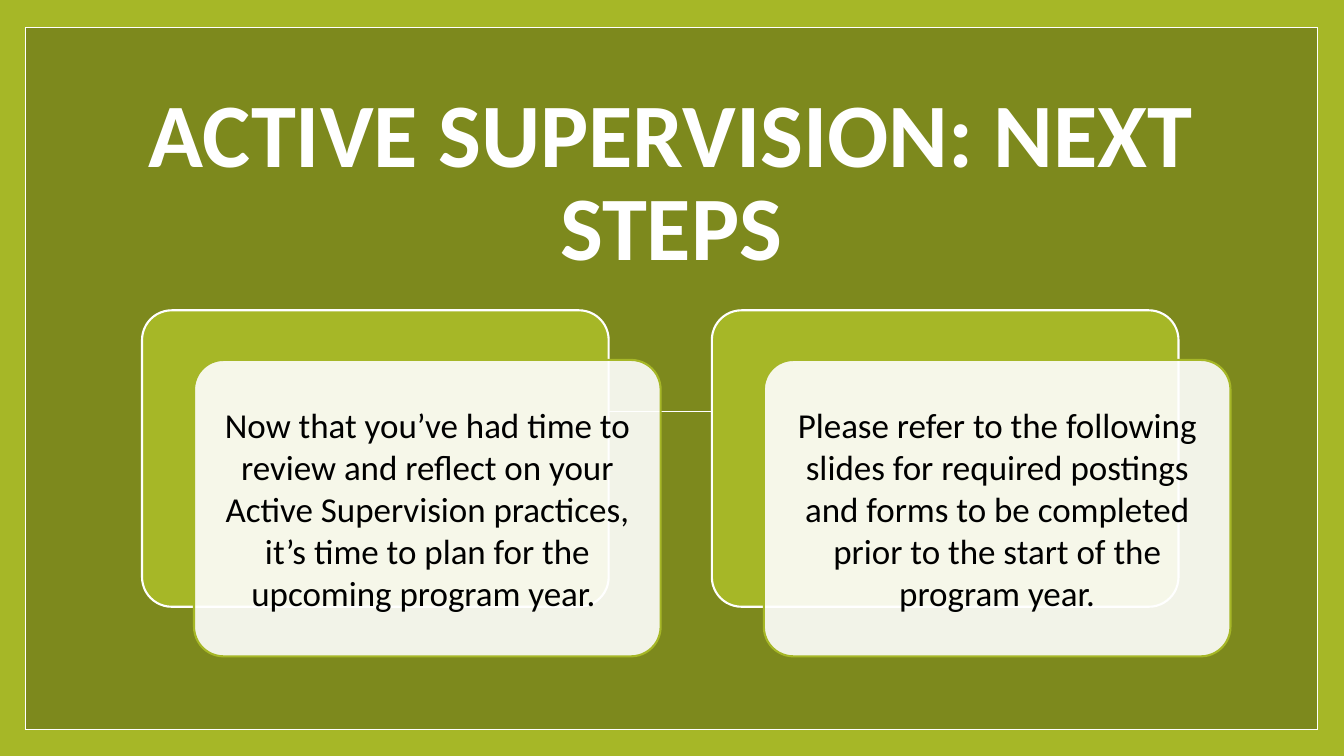
from lxml.etree import SubElement
from pptx import Presentation
from pptx.dml.color import RGBColor
from pptx.enum.shapes import MSO_CONNECTOR as Connector, MSO_SHAPE as Shape
from pptx.enum.text import MSO_ANCHOR as Anchor, MSO_AUTO_SIZE as AutoSize, PP_ALIGN as Align
from pptx.oxml.ns import qn
from pptx.util import Cm, Pt

LIME = RGBColor(0xA6, 0xB7, 0x27)
OLIVE = RGBColor(0x7D, 0x89, 0x1D)
WHITE = RGBColor(0xFF, 0xFF, 0xFF)
BLACK = RGBColor(0x00, 0x00, 0x00)

FRAME = (0.64, 0.69, 32.56, 17.7)
CARD_LEFT, CARD_TOP, CARD_STEP = 3.58, 7.82, 14.36
CARD_SIZE = (11.76, 7.47)
FRONT_SHIFT = (1.31, 1.25)
TEXT_MARGIN = 0.22

STEPS = (
    "Now that you’ve had time to review and reflect on your Active Supervision "
    "practices, it’s time to plan for the upcoming program year. ",
    "Please refer to the following slides for required postings and forms to be "
    "completed prior to the start of the program year.",
)


class SlideBuilder:
    def __init__(self, page, font_name):
        self.page = page
        self.font_name = font_name

    def background(self, color):
        fill = self.page.background.fill
        fill.solid()
        fill.fore_color.rgb = color

    def panel(self, kind, place, fill, line, width, opacity=100):
        box = self.page.shapes.add_shape(kind, *map(Cm, place))
        box.shadow.inherit = False
        if fill is None:
            box.fill.background()
        else:
            box.fill.solid()
            box.fill.fore_color.rgb = fill
            if opacity < 100:
                color = box.element.spPr.find(qn("a:solidFill"))[0]
                SubElement(color, qn("a:alpha")).set("val", str(opacity * 1000))
        box.line.color.rgb = line
        box.line.width = Pt(width)
        return box

    def line(self, start, end, color, width):
        link = self.page.shapes.add_connector(
            Connector.STRAIGHT, *map(Cm, (*start, *end)))
        link.line.color.rgb = color
        link.line.width = Pt(width)
        SubElement(link.element.spPr, qn("a:effectLst"))

    def add_text(self, box, text, size, color, anchor, bold=False, spacing=1.0):
        frame = box.text_frame
        frame.word_wrap = True
        frame.auto_size = AutoSize.NONE
        frame.vertical_anchor = anchor
        para = frame.paragraphs[0]
        para.alignment = Align.CENTER
        para.line_spacing = spacing
        span = para.add_run()
        span.text = text
        span.font.name = self.font_name
        span.font.size = Pt(size)
        span.font.bold = bold
        span.font.color.rgb = color

    def title(self, text, place):
        box = self.page.shapes.title
        box.left, box.top, box.width, box.height = map(Cm, place)
        # Bring the title in front of the frame
        box.element.getparent().append(box.element)
        self.add_text(box, text, 64.8, WHITE, Anchor.BOTTOM, True, 0.85)

    def card(self, left, top, text):
        width, height = CARD_SIZE
        front_left, front_top = left + FRONT_SHIFT[0], top + FRONT_SHIFT[1]
        back = self.panel(Shape.ROUNDED_RECTANGLE, (left, top, width, height),
                          LIME, WHITE, 1.5)
        front = self.panel(Shape.ROUNDED_RECTANGLE,
                           (front_left, front_top, width, height),
                           WHITE, LIME, 1.5, opacity=90)
        for panel in (back, front):
            panel.adjustments[0] = 0.1
        box = self.page.shapes.add_textbox(
            Cm(front_left + TEXT_MARGIN), Cm(front_top + TEXT_MARGIN),
            Cm(width - 2 * TEXT_MARGIN), Cm(height - 2 * TEXT_MARGIN))
        frame = box.text_frame
        frame.margin_left = frame.margin_right = Cm(0.25)
        frame.margin_top = frame.margin_bottom = Cm(0.25)
        self.add_text(box, text, 25, BLACK, Anchor.MIDDLE)


def main():
    deck = Presentation()
    deck.slide_width, deck.slide_height = Cm(33.87), Cm(19.05)
    page = deck.slides.add_slide(deck.slide_layouts[5])
    builder = SlideBuilder(page, "Calibri")

    # Background and frame
    builder.background(LIME)
    builder.panel(Shape.RECTANGLE, FRAME, OLIVE, WHITE, 1)
    builder.line((5.49, 10.36), (28.35, 10.36), WHITE, 0.79)
    builder.panel(Shape.RECTANGLE, FRAME, None, WHITE, 1)

    # Title
    builder.title("ACTIVE SUPERVISION: NEXT STEPS", (3.07, 2.44, 27.69, 4.72))

    # Step cards
    for index, text in enumerate(STEPS):
        builder.card(CARD_LEFT + index * CARD_STEP, CARD_TOP, text)

    deck.save("out.pptx")


if __name__ == "__main__":
    main()
